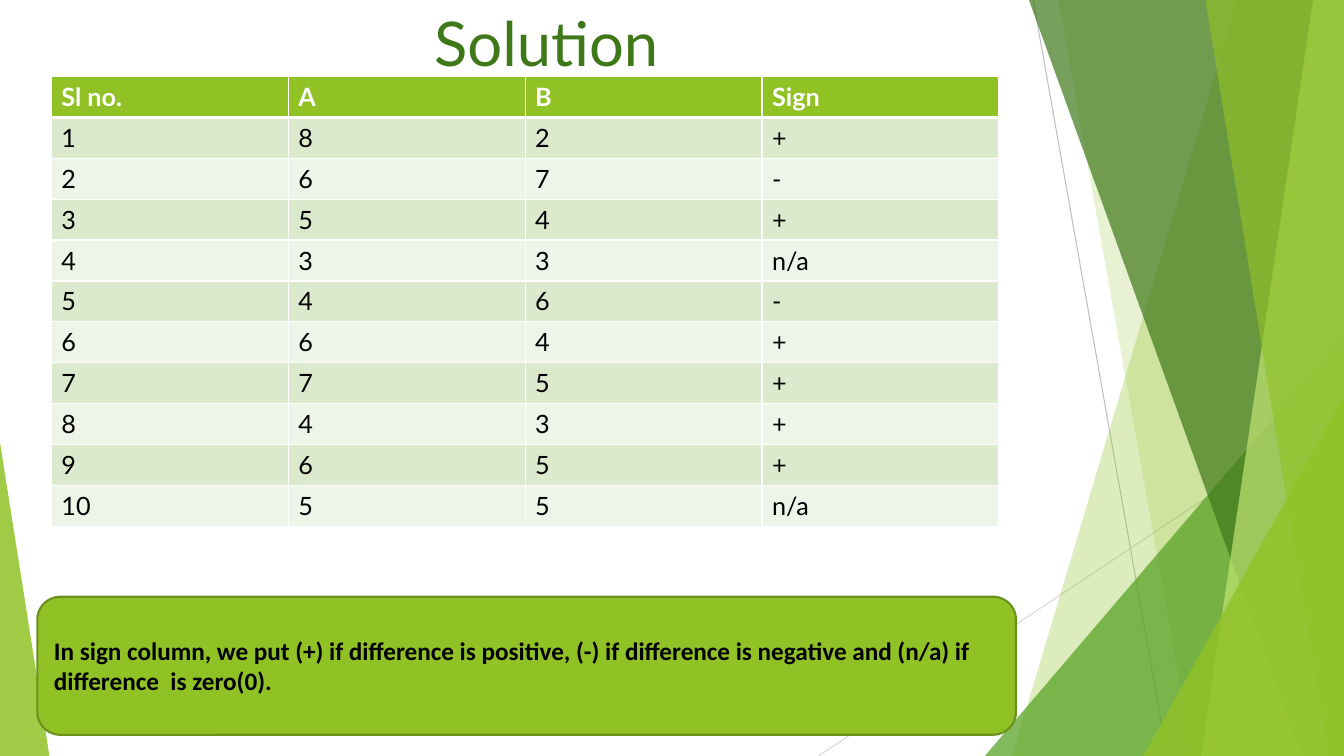
import pptx
import pptx.dml.color
import pptx.enum.dml
import pptx.enum.shapes
import pptx.enum.text
import pptx.oxml
import pptx.oxml.ns
import pptx.util
from lxml import etree

Pt = pptx.util.Pt
GREEN, DARK_GREEN, WHITE, BLACK = "90C226", "3F7819", "FFFFFF", "000000"
HEADINGS = ["Sl no.", "A", "B", "Sign"]
PAIRS = [(8, 2), (6, 7), (5, 4), (3, 3), (4, 6), (6, 4), (7, 5), (4, 3), (6, 5), (5, 5)]
RULE = ("In sign column, we put (+) if difference is positive, (-) if difference "
        "is negative and (n/a) if difference  is zero(0).")


def rgb(code):
    """Return the colour for a hex string."""
    return pptx.dml.color.RGBColor.from_string(code)


def add_child(parent, tag, **attributes):
    """Append a drawing element to a parent element."""
    return etree.SubElement(parent, pptx.oxml.ns.qn(tag), attributes)


def paint(shape, color, opacity=100):
    """Fill a shape without outline or shadow, at an opacity in percent."""
    shape.shadow.inherit = False
    shape.fill.solid()
    shape.fill.fore_color.rgb = rgb(color)
    shape.line.fill.background()
    if opacity < 100:
        tint = shape.fill._xPr.find(".//" + pptx.oxml.ns.qn("a:srgbClr"))
        add_child(tint, "a:alpha", val=str(opacity * 1000))


def write(frame, text, align, **font_format):
    """Write one formatted paragraph into a text frame."""
    paragraph = frame.paragraphs[0]
    paragraph.alignment = align
    run = paragraph.add_run()
    run.text = text
    run.font.color.rgb = rgb(font_format.pop("color"))
    for name, value in font_format.items():
        setattr(run.font, name, value)


def add_ray(slide, start, end, color):
    """Draw a thin background line between two points."""
    ray = slide.shapes.add_connector(
        pptx.enum.shapes.MSO_CONNECTOR.STRAIGHT, *map(Pt, start + end))
    ray.line.color.rgb = rgb(color)
    ray.line.width = Pt(0.75)
    add_child(ray._element.spPr, "a:effectLst")


def add_band(slide, box, top_x, bottom_x, color, opacity):
    """Draw a slanted band reaching from its left edge to the right of the box."""
    left, top, width, height = box
    builder = slide.shapes.build_freeform(top_x, 0, scale=Pt(1))
    builder.add_line_segments([(width, 0), (width, height), (bottom_x, height)])
    paint(builder.convert_to_shape(Pt(left), Pt(top)), color, opacity)


def add_facet(slide, box, apex, color, opacity):
    """Draw a right triangle with its apex at the left (0) or right (1)."""
    facet = slide.shapes.add_shape(
        pptx.enum.shapes.MSO_SHAPE.ISOSCELES_TRIANGLE, *map(Pt, box))
    facet.adjustments[0] = apex
    paint(facet, color, opacity)


def add_backdrop(slide, box):
    """Draw the layered green facets in the slide box."""
    left, top, width, height = box
    right, bottom = left + width, top + height

    def corner(facet_width, facet_height):
        return right - facet_width, bottom - facet_height, facet_width, facet_height

    add_ray(slide, (left + 738, top), (left + 833.76, bottom), "BFBFBF")
    add_ray(slide, (right, top + 290.16), (left + 584.64, bottom), "D9D9D9")
    add_band(slide, box, 884.16, 722.88, GREEN, 30)
    add_band(slide, box, 756, 851.76, GREEN, 20)
    add_facet(slide, corner(256.56, 300.24), 1, "54A021", 72)
    for band in [(735.12, 929.52, DARK_GREEN, 70),
                 (938.16, 858.24, "C0E474", 70),
                 (861.12, 948.96, GREEN, 65)]:
        add_band(slide, box, *band)
    add_facet(slide, corner(143.52, 257.04), 1, GREEN, 80)
    add_facet(slide, (left, bottom - 223.92, 35.28, 223.92), 0, GREEN, 85)


def add_title(slide, box):
    """Write the centred heading at the top of its box."""
    heading = slide.shapes.add_textbox(*map(Pt, box)).text_frame
    heading.word_wrap = True
    heading.vertical_anchor = pptx.enum.text.MSO_ANCHOR.TOP
    write(heading, "Solution", pptx.enum.text.PP_ALIGN.CENTER,
          size=Pt(44), name="Lato", color=DARK_GREEN)


def add_borders(cell, **widths):
    """Give a cell white borders of the given widths in points."""
    properties = cell._tc.get_or_add_tcPr()
    for side, width in widths.items():
        border = add_child(properties, "a:ln" + side, w=str(Pt(width)))
        add_child(add_child(border, "a:solidFill"), "a:srgbClr", val=WHITE)


def sign_of(a, b):
    """Return the sign of the difference between two values."""
    return "+" if a > b else "-" if a < b else "n/a"


def add_sign_table(slide, box):
    """Fill the box with the table of paired values and signs."""
    rows = [HEADINGS] + [[number, a, b, sign_of(a, b)]
                         for number, (a, b) in enumerate(PAIRS, 1)]
    table = slide.shapes.add_table(len(rows), len(HEADINGS), *map(Pt, box)).table
    for column in table.columns:
        column.width = Pt(box[2] / len(HEADINGS))
    for row_index, values in enumerate(rows):
        table.rows[row_index].height = Pt(box[3] / len(rows))
        is_header = row_index == 0
        band = GREEN if is_header else "DBE9CD" if row_index % 2 else "EEF4E8"
        for column_index, value in enumerate(values):
            cell = table.cell(row_index, column_index)
            add_borders(cell, L=1, R=1, T=3 if row_index == 1 else 1,
                        B=3 if is_header else 1)
            cell.fill.solid()
            cell.fill.fore_color.rgb = rgb(band)
            write(cell.text_frame, str(value), pptx.enum.text.PP_ALIGN.LEFT,
                  size=Pt(18), name="Lato", bold=is_header,
                  color=WHITE if is_header else BLACK)


def add_rule_note(slide, box):
    """Draw the rounded note that explains the sign column."""
    note = slide.shapes.add_shape(
        pptx.enum.shapes.MSO_SHAPE.ROUNDED_RECTANGLE, *map(Pt, box))
    paint(note, GREEN)
    note.line.color.rgb = rgb("6B901C")
    note.line.width = Pt(1.5)
    note.text_frame.word_wrap = True
    note.text_frame.vertical_anchor = pptx.enum.text.MSO_ANCHOR.MIDDLE
    write(note.text_frame, RULE, pptx.enum.text.PP_ALIGN.LEFT,
          size=Pt(18), name="Calibri", bold=True, color=BLACK)


def main():
    """Build the slide and save the presentation."""
    deck = pptx.Presentation()
    deck.slide_width, deck.slide_height = Pt(960), Pt(540)
    slide = deck.slides.add_slide(deck.slide_layouts[6])
    add_backdrop(slide, (0, 0, 960, 540))
    add_title(slide, (51.84, 0, 676.8, 103.68))
    add_sign_table(slide, (36.72, 54.72, 676.8, 321.2))
    add_rule_note(slide, (26.64, 426.24, 699.12, 98.64))
    deck.save("out.pptx")


if __name__ == "__main__":
    main()
